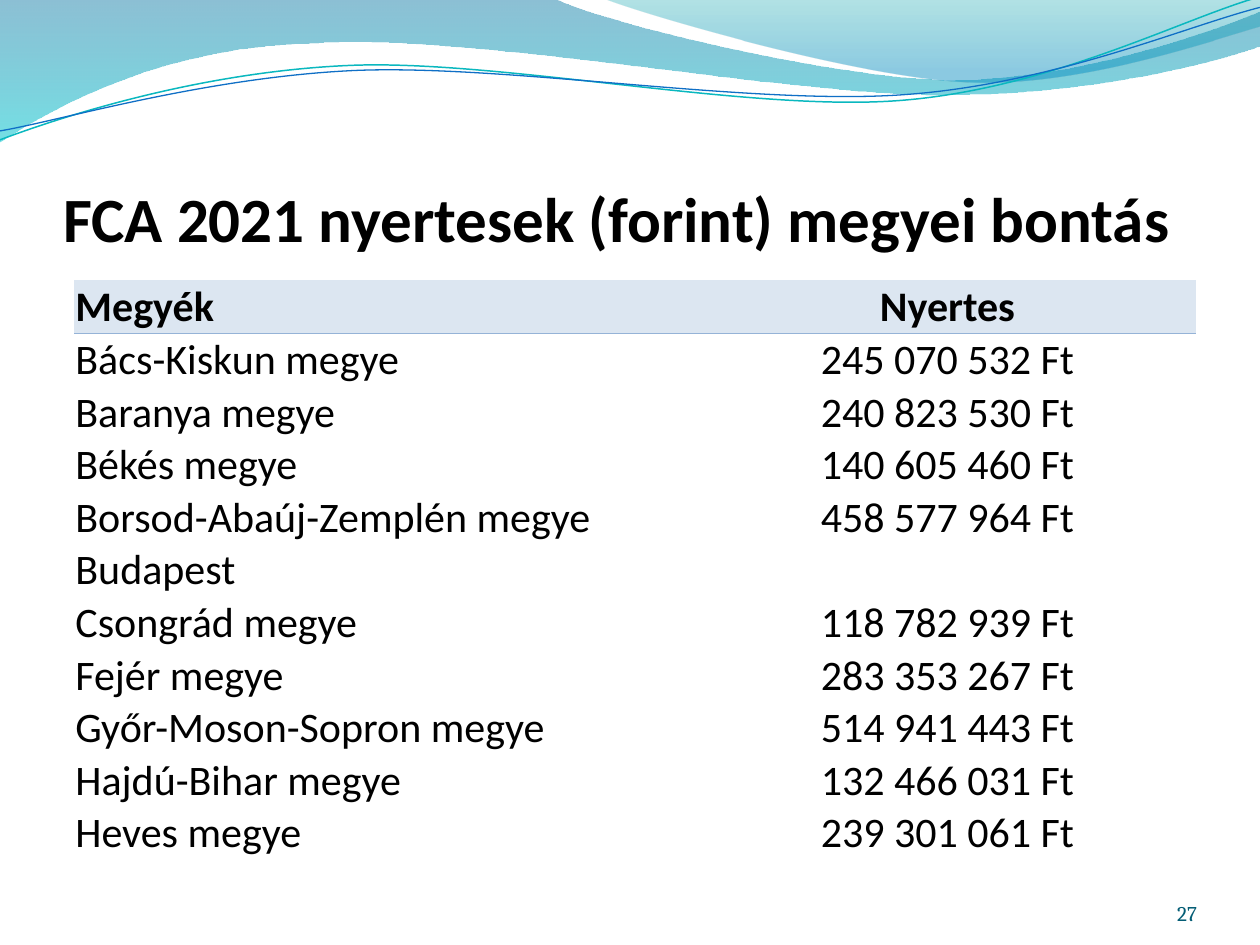
from dataclasses import dataclass

from lxml.etree import SubElement
from pptx import Presentation
from pptx.dml.color import RGBColor as Rgb
from pptx.enum.text import MSO_ANCHOR as Anchor, MSO_AUTO_SIZE as AutoSize, PP_ALIGN as Align
from pptx.oxml.ns import qn
from pptx.util import Cm, Pt


@dataclass(frozen=True)
class Theme:
    """Colours, fonts and type sizes of the slide."""
    ink: str = "000000"
    page_ink: str = "045D75"
    header_fill: str = "DCE6F1"
    header_rule: str = "95B3D7"
    body_font: str = "Calibri"
    page_font: str = "Cambria"
    title_size: int = 36
    table_size: int = 24
    page_size: int = 12


THEME = Theme()
PLAIN_TABLE_STYLE = "{2D5ABB26-0587-4C30-8999-92F81FD0307C}"

BANDS = [
    ([(0, 0), (11.18, -0.03),
      ((12.09, 0.43), (16.87, 1.6), (19.25, 1.6)),
      ((21.67, 1.6), (24.33, 0.66), (25.4, 0.23)), (25.43, 0.91),
      ((24.97, 1.12), (22.1, 1.93), (18.95, 1.91)),
      ((15.8, 1.91), (9.7, 0.71), (6.53, 0.86)),
      ((3.28, 0.91), (1.17, 2.11), (-0.03, 2.87))],
     [(0, "0074A1", 45), (1, "00C6CF", 55)]),
    ([(12.17, -0.03),
      ((12.93, 0.28), (17.32, 1.57), (19.53, 1.65)),
      ((21.74, 1.75), (24.41, 0.81), (25.4, 0.53)), (25.4, 0)],
     [(0, "00A1A9", 30), (0.8, "008BBF", 45)]),
]
STRANDS = [
    ([(0, 2.82),
      ((1.22, 2.36), (4.01, 1.45), (7.04, 1.32)),
      ((10.03, 1.19), (15.06, 2.26), (18.11, 2.03)),
      ((21.16, 1.8), (23.83, 0.38), (25.35, -0.05))], "0AB8BF", 0.85),
    ([(0, 2.64),
      ((1.19, 2.44), (4.17, 1.55), (7.19, 1.42)),
      ((10.24, 1.3), (15.16, 2.13), (18.21, 1.91)),
      ((21.23, 1.7), (23.9, 0.53), (25.4, 0.15))], "0F6FC6", 0.75),
]
COUNTIES = [
    ("Megyék", "Nyertes"),
    ("Bács-Kiskun megye", "245 070 532 Ft"),
    ("Baranya megye", "240 823 530 Ft"),
    ("Békés megye", "140 605 460 Ft"),
    ("Borsod-Abaúj-Zemplén megye", "458 577 964 Ft"),
    ("Budapest", ""),
    ("Csongrád megye", "118 782 939 Ft"),
    ("Fejér megye", "283 353 267 Ft"),
    ("Győr-Moson-Sopron megye", "514 941 443 Ft"),
    ("Hajdú-Bihar megye", "132 466 031 Ft"),
    ("Heves megye", "239 301 061 Ft"),
]


def assign(target, values):
    """Set each named attribute of the target."""
    for name, value in values.items():
        setattr(target, name, value)


def write(frame, text, align, ink, **font):
    """Write one formatted paragraph into a text frame."""
    paragraph = frame.paragraphs[0]
    paragraph.alignment = align
    run = paragraph.add_run()
    run.text = text
    assign(run.font, font)
    run.font.color.rgb = Rgb.from_string(ink)


def is_curve(step):
    """Tell whether a step holds two control points and an end point."""
    return len(step) == 3


def add_curve(slide, steps, close):
    """Add a freeform without shadow from points and cubic curve steps."""
    points = [(Cm(x), Cm(y)) for step in steps
              for x, y in (step if is_curve(step) else (step,))]
    builder = slide.shapes.build_freeform(*points[0])
    builder.add_line_segments(points[1:], close=close)
    curve = builder.convert_to_shape()
    curve.shadow.inherit = False
    segments = iter(list(curve._element.spPr.iter(qn("a:lnTo"))))
    for step in steps[1:]:
        segment = next(segments)
        if is_curve(step):
            outline = segment.getparent()
            bezier = SubElement(outline, qn("a:cubicBezTo"))
            segment.addprevious(bezier)
            for part in (segment, next(segments), next(segments)):
                bezier.append(part[0])
                outline.remove(part)
    return curve


def add_band(slide, steps, stops):
    """Add a wave band with a translucent vertical gradient."""
    band = add_curve(slide, steps, True)
    band.line.fill.background()
    band.fill.gradient()
    band.fill.gradient_angle = 270
    for stop, (position, color, _) in zip(band.fill.gradient_stops, stops):
        stop.position = position
        stop.color.rgb = Rgb.from_string(color)
    tints = band._element.spPr.iter(qn("a:srgbClr"))
    for tint, (_, _, opacity) in zip(tints, stops):
        SubElement(tint, qn("a:alpha"), val=str(opacity * 1000))


def add_strand(slide, steps, color, width):
    """Add a thin open wave line."""
    strand = add_curve(slide, steps, False)
    strand.fill.background()
    strand.line.color.rgb = Rgb.from_string(color)
    strand.line.width = Pt(width)


def set_title(slide, text):
    """Place and fill the title placeholder."""
    title = slide.shapes.title
    assign(title, dict(left=Cm(1.27), top=Cm(1.96), width=Cm(22.86), height=Cm(3.18)))
    assign(title.text_frame, dict(
        margin_left=0, margin_right=0, margin_top=Cm(0.13), margin_bottom=0,
        vertical_anchor=Anchor.BOTTOM, word_wrap=True, auto_size=AutoSize.NONE))
    write(title.text_frame, text, Align.LEFT, THEME.ink,
          name=THEME.body_font, size=Pt(THEME.title_size), bold=True)


def shade_header(cell):
    """Give a header cell its bottom rule and fill."""
    rule = SubElement(cell._tc.get_or_add_tcPr(), qn("a:lnB"), w=str(Pt(0.5)))
    SubElement(SubElement(rule, qn("a:solidFill")), qn("a:srgbClr"), val=THEME.header_rule)
    cell.fill.solid()
    cell.fill.fore_color.rgb = Rgb.from_string(THEME.header_fill)


def add_county_table(slide, rows):
    """Add the table of counties and amounts under a shaded header."""
    row_height = Cm(1.06)
    table = slide.shapes.add_table(len(rows), 2, Cm(1.5), Cm(5.64), Cm(22.6),
                                   row_height * len(rows)).table
    table._tbl.tblPr.find(qn("a:tableStyleId")).text = PLAIN_TABLE_STYLE
    table.horz_banding = False
    for column, width in zip(table.columns, (12.6, 10)):
        column.width = Cm(width)
    for r, row in enumerate(rows):
        table.rows[r].height = row_height if r else Cm(1.08)
        for c, text in enumerate(row):
            cell = table.cell(r, c)
            assign(cell, dict(margin_left=Cm(0.02), margin_right=Cm(0.02),
                              margin_top=Cm(0.02), margin_bottom=0,
                              vertical_anchor=Anchor.BOTTOM))
            if r == 0:
                shade_header(cell)
            else:
                cell.fill.background()
            if text:
                write(cell.text_frame, text, (Align.LEFT, Align.CENTER)[c], THEME.ink,
                      name=THEME.body_font, size=Pt(THEME.table_size), bold=r == 0)


def add_page_number(slide, number):
    """Add the page number at the lower right."""
    frame = slide.shapes.add_textbox(Cm(22.02), Cm(17.65), Cm(2.11), Cm(1.02)).text_frame
    assign(frame, dict(margin_left=0, margin_right=0, margin_top=0, margin_bottom=0,
                       vertical_anchor=Anchor.BOTTOM, word_wrap=True))
    write(frame, number, Align.RIGHT, THEME.page_ink,
          name=THEME.page_font, size=Pt(THEME.page_size))


def main():
    """Build and save the slide."""
    deck = Presentation()
    assign(deck, dict(slide_width=Cm(25.4), slide_height=Cm(19.05)))
    slide = deck.slides.add_slide(deck.slide_layouts[5])
    for band in BANDS:
        add_band(slide, *band)
    for strand in STRANDS:
        add_strand(slide, *strand)
    set_title(slide, "FCA 2021 nyertesek (forint) megyei bontás")
    add_county_table(slide, COUNTIES)
    add_page_number(slide, "27")
    deck.save("out.pptx")


if __name__ == "__main__":
    main()
